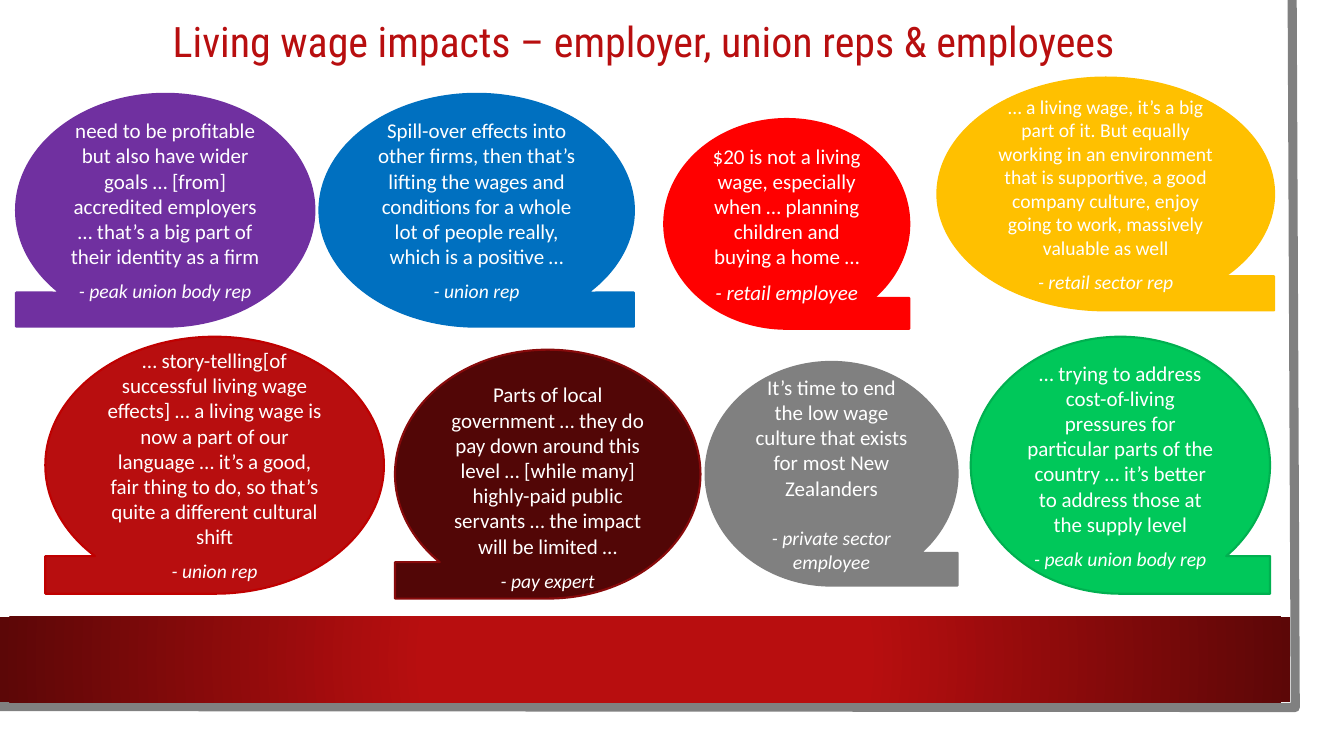
from lxml import etree
from pptx import Presentation
from pptx.dml.color import RGBColor
from pptx.enum import shapes, text
from pptx.oxml import ns
from pptx.util import Pt

COLORS = {
    "white": "FFFFFF", "crimson": "B80E0F", "wine": "5C0707", "frame": "808080",
    "purple": "7030A0", "blue": "0070C0", "red": "FF0000", "amber": "FFC000",
    "maroon": "520606", "maroon_edge": "880A0B", "crimson_edge": "C00000",
    "green": "00C85A", "green_edge": "00B050",
}


def rgb(name):
    return RGBColor.from_string(COLORS[name])


def write(para, words, size, font="Calibri", color="white", italic=False, before=0):
    para.alignment = text.PP_ALIGN.CENTER
    para.space_before = Pt(before)
    span = para.add_run()
    span.text = words
    span.font.size = Pt(size)
    span.font.name = font
    span.font.italic = italic
    span.font.color.rgb = rgb(color)


deck = Presentation()
deck.slide_width, deck.slide_height = Pt(960), Pt(540)
page = deck.slides.add_slide(deck.slide_layouts[6])

# Frame along the right and bottom edges
builder = page.shapes.build_freeform(Pt(923), Pt(0))
builder.add_line_segments([(Pt(925.2), Pt(505.4)), (Pt(-2.2), Pt(504.7))], close=False)
frame = builder.convert_to_shape()
frame.shadow.inherit = False
frame.fill.background()
frame.line.color.rgb = rgb("frame")
frame.line.width = Pt(6.5)

# Footer band, bright in the middle and dark at both ends
band = page.shapes.add_shape(
    shapes.MSO_SHAPE.RECTANGLE, Pt(0), Pt(440.6), Pt(921.6), Pt(61.2))
band.shadow.inherit = False
band.line.fill.background()
band.fill.gradient()
for stop, (position, color) in zip(band.fill.gradient_stops,
                                   [(0.34, "crimson"), (1, "wine")]):
    stop.position = position
    stop.color.rgb = rgb(color)
linear = band.element.spPr.find(".//" + ns.qn("a:lin"))
gradient = linear.getparent()
gradient.remove(linear)
circle = etree.SubElement(gradient, ns.qn("a:path"), {"path": "circle"})
etree.SubElement(circle, ns.qn("a:fillToRect"),
                 {side: "50000" for side in "ltrb"})

title = page.shapes.add_textbox(Pt(32.4), Pt(-4.3), Pt(855.4), Pt(71.3))
title.text_frame.word_wrap = True
title.text_frame.vertical_anchor = text.MSO_ANCHOR.MIDDLE
heading = title.text_frame.paragraphs[0]
heading.line_spacing = 0.9
write(heading, "Living wage impacts – employer, union reps & employees", 30,
      font="Roboto Condensed", color="crimson")

# Box, fill, edge, tail on the left, quote, quote size, speaker, speaker size,
# gap before the speaker, extra top inset
BUBBLES = [
    ((32.4, 240.5, 241.9, 183.6), "crimson", "crimson_edge", True,
     "… story-telling[of successful living wage effects] … a living wage is now "
     "a part of our language … it’s a good, fair thing to do, so that’s quite a "
     "different cultural shift", 15, "- union rep", 14, 7.3, 0),
    ((228.2, 67, 224.6, 166.3), "blue", "blue", False,
     "Spill-over effects into other firms, then that’s lifting the wages and "
     "conditions for a whole lot of people really, which is a positive …",
     15, "- union rep", 14, 7.3, 0),
    ((693.4, 240.5, 213.8, 183.6), "green", "green_edge", False,
     "… trying to address cost-of-living pressures for particular parts of the "
     "country … it’s better to address those at the supply level",
     15, "- peak union body rep", 14, 7.3, 0),
    ((11.5, 67, 213.1, 166.3), "purple", "purple", True,
     "need to be profitable but also have wider goals … [from] accredited "
     "employers … that’s a big part of their identity as a firm",
     15, "- peak union body rep", 14, 7.3, 0),
    ((669.6, 55.4, 240.5, 166.3), "amber", "amber", False,
     "… a living wage, it’s a big part of it. But equally working in an "
     "environment that is supportive, a good company culture, enjoy going to "
     "work, massively valuable as well", 14, "- retail sector rep", 14, 7.3, 0),
    ((282.2, 249.8, 218.2, 177.8), "maroon", "maroon_edge", True,
     "Parts of local government … they do pay down around this level … [while "
     "many] highly-paid public servants … the impact will be limited …",
     15, "- pay expert", 14, 7.3, 18.3),
    ((474.5, 85, 175, 149.8), "red", "red", False,
     "$20 is not a living wage, especially when … planning children and buying "
     "a home …", 15, "- retail employee", 15, 7.3, 0),
    ((504, 258.5, 180, 159.8), "frame", "frame", False,
     "It’s time to end the low wage culture that exists for most New Zealanders",
     15, "- private sector employee", 14, 18.3, 0),
]

for (box, fill, edge, tail_left, quote, quote_size,
     speaker, speaker_size, gap, top_inset) in BUBBLES:
    bubble = page.shapes.add_shape(
        shapes.MSO_SHAPE.FLOWCHART_SEQUENTIAL_ACCESS_STORAGE, *map(Pt, box))
    bubble.shadow.inherit = False
    bubble.fill.solid()
    bubble.fill.fore_color.rgb = rgb(fill)
    bubble.line.color.rgb = rgb(edge)
    bubble.line.width = Pt(1.5)
    if tail_left:
        bubble.element.spPr.find(ns.qn("a:xfrm")).set("flipH", "1")
    frame_text = bubble.text_frame
    frame_text.word_wrap = True
    frame_text.vertical_anchor = text.MSO_ANCHOR.MIDDLE
    frame_text.margin_top = Pt(3.6 + top_inset)
    write(frame_text.paragraphs[0], quote, quote_size)
    write(frame_text.add_paragraph(), speaker, speaker_size, italic=True, before=gap)

deck.save("out.pptx")
